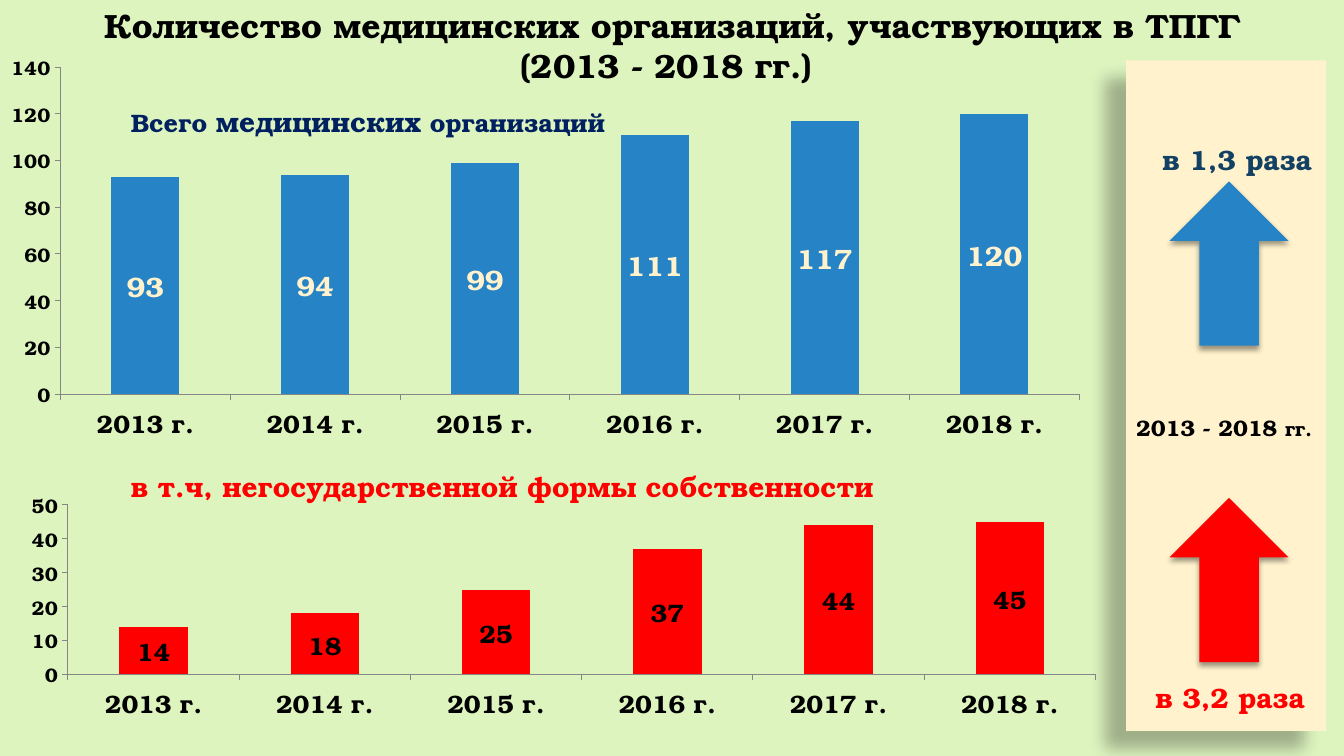
from lxml import etree
from pptx import Presentation
from pptx import util as u
from pptx.chart.data import CategoryChartData
from pptx.dml.color import RGBColor
from pptx.enum import chart as ch, shapes, text
from pptx.oxml import ns, parse_xml

PX = 9144  # EMU: 100 px to the inch
FACE = "TeX Gyre Bonum"
GREEN = RGBColor(0xDD, 0xF4, 0xBF)
CREAM = RGBColor(0xFF, 0xF2, 0xCC)
BLUE = RGBColor(0x26, 0x83, 0xC6)
NAVY = RGBColor(0x00, 0x20, 0x60)
DEEP = RGBColor(0x13, 0x41, 0x63)
RED = RGBColor(0xFF, 0x00, 0x00)
BLACK = RGBColor(0x00, 0x00, 0x00)
GREY = RGBColor(0x86, 0x86, 0x86)

YEARS = [f"{year} г." for year in range(2013, 2019)]


def scale(*box):
    return [u.Emu(n * PX) for n in box]


def put(item, vals):
    for name, val in vals.items():
        setattr(item, name, val)


def style(font, size, color):
    put(font, {"name": FACE, "size": u.Pt(size), "bold": True})
    font.color.rgb = color


def label(slide, box, color, *runs, align=text.PP_ALIGN.LEFT):
    """Text box; each run is (words, size)."""
    frame = slide.shapes.add_textbox(*scale(*box)).text_frame
    put(frame, {"word_wrap": True,
                "auto_size": text.MSO_AUTO_SIZE.SHAPE_TO_FIT_TEXT})
    para = frame.paragraphs[0]
    para.alignment = align
    for words, size in runs:
        run = para.add_run()
        run.text = words
        style(run.font, size, color)


def shade(shape, alpha, blur, dist, angle):
    """Outer shadow: percent, points, points, degrees."""
    shape.shadow.inherit = False
    fx = shape._element.spPr.find(ns.qn("a:effectLst"))
    outer = etree.SubElement(fx, ns.qn("a:outerShdw"), {
        "blurRad": str(u.Pt(blur)), "dist": str(u.Pt(dist)),
        "dir": str(angle * 60000), "algn": "ctr", "rotWithShape": "0"})
    tint = etree.SubElement(outer, ns.qn("a:srgbClr"), val=str(BLACK))
    etree.SubElement(tint, ns.qn("a:alpha"), val=str(alpha * 1000))


def block(slide, kind, box, color, shadow):
    shape = slide.shapes.add_shape(kind, *scale(*box))
    shape.fill.solid()
    shape.fill.fore_color.rgb = color
    shape.line.fill.background()
    shade(shape, *shadow)


def place(chart, plot):
    """Fix the inner plot area as fractions of the chart."""
    area = chart._chartSpace.chart.plotArea
    for old in area.findall(ns.qn("c:layout")):
        area.remove(old)
    parts = '<c:layoutTarget val="inner"/>'
    parts += "".join(f'<c:{side}Mode val="edge"/>' for side in "xy")
    parts += "".join(f'<c:{side} val="{val}"/>'
                     for side, val in zip("xywh", plot))
    area.insert(0, parse_xml(
        f'<c:layout {ns.nsdecls("c")}><c:manualLayout>{parts}'
        '</c:manualLayout></c:layout>'))


def bars(slide, box, plot, vals, top, step, color, tag, size):
    data = CategoryChartData()
    data.categories = YEARS
    data.add_series("Организации", vals)
    chart = slide.shapes.add_chart(
        ch.XL_CHART_TYPE.COLUMN_CLUSTERED, *scale(*box), data).chart
    put(chart, {"has_legend": False, "has_title": False})
    style(chart.font, 18, BLACK)
    place(chart, plot)

    # Axes
    put(chart.value_axis, {"minimum_scale": 0, "maximum_scale": top,
                           "major_unit": step})
    for axis, points in (chart.category_axis, 18), (chart.value_axis, 14):
        put(axis, {"has_major_gridlines": False,
                   "major_tick_mark": ch.XL_TICK_MARK.OUTSIDE})
        style(axis.tick_labels.font, points, BLACK)
        axis.format.line.color.rgb = GREY
        axis.format.line.width = u.Pt(0.75)

    # Columns and their values
    group = chart.plots[0]
    put(group, {"gap_width": 150, "vary_by_categories": False,
                "has_data_labels": True})
    fill = group.series[0].format.fill
    fill.solid()
    fill.fore_color.rgb = color
    put(group.data_labels, {"show_value": True,
                            "position": ch.XL_LABEL_POSITION.CENTER})
    style(group.data_labels.font, size, tag)


def main():
    prs = Presentation()
    put(prs, dict(zip(("slide_width", "slide_height"), scale(1333, 750))))
    slide = prs.slides.add_slide(prs.slide_layouts[6])
    slide.background.fill.solid()
    slide.background.fill.fore_color.rgb = GREEN

    # Title
    label(slide, (45, 0, 1243, 91), BLACK,
          ("Количество медицинских организаций, участвующих в ТПГГ "
           "(2013 - 2018 гг.) ", 24), align=text.PP_ALIGN.CENTER)

    # Charts
    bars(slide, (11, 52, 1080, 408), (0.044, 0.035, 0.937, 0.796),
         (93, 94, 99, 111, 117, 120), 140, 20, BLUE, CREAM, 20)
    bars(slide, (0, 375, 1087, 361), (0.062, 0.349, 0.938, 0.466),
         (14, 18, 25, 37, 44, 45), 50, 10, RED, BLACK, 18)

    # Growth panel
    kind = shapes.MSO_SHAPE
    block(slide, kind.RECTANGLE, (1117, 60, 198, 665), CREAM,
          (28, 11.8, 19.7, 141))
    label(slide, (1143, 136, 172, 44), DEEP, ("в 1,3 раза", 20))
    label(slide, (1136, 670, 179, 44), RED, ("в 3,2 раза", 20))
    label(slide, (1117, 406, 248, 37), BLACK,
          ("2013 - 2018 ", 16), ("гг.", 14))
    for y, color in (180, BLUE), (494, RED):
        block(slide, kind.UP_ARROW, (1160, y, 118, 163), color,
              (40, 4, 3, 90))

    # Chart captions
    label(slide, (120, 99, 517, 44), NAVY,
          ("Всего ", 18), ("медицинских", 20), (" организаций", 18))
    label(slide, (120, 461, 785, 44), RED,
          ("в т.ч, негосударственной формы собственности", 20))

    prs.save("out.pptx")


if __name__ == "__main__":
    main()
